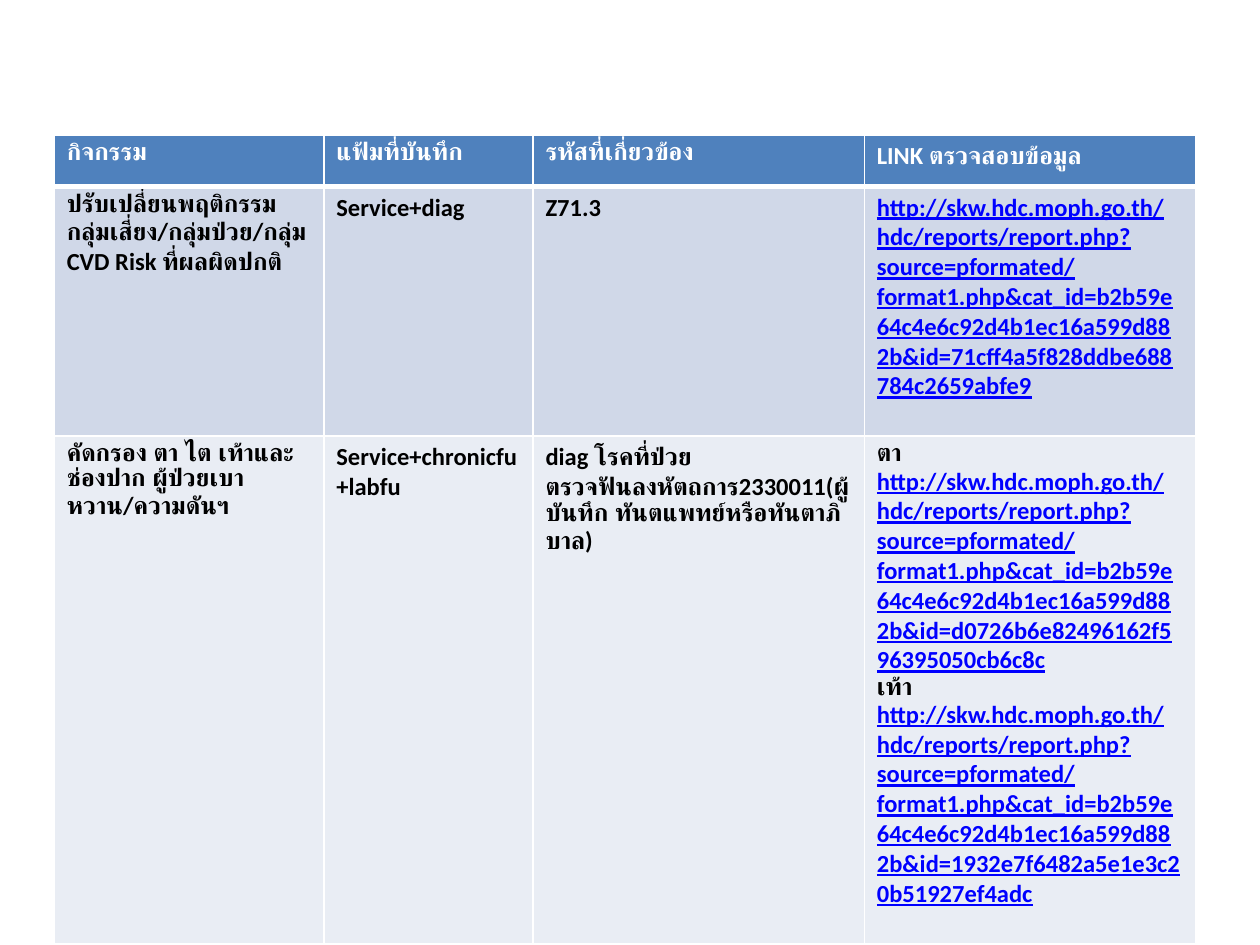
"""Build a slide with a table of screening activities, files, codes and report links."""
import lxml.etree
import pptx
import pptx.dml.color
import pptx.oxml.ns
import pptx.util

COLORS = {
    "header": "4F81BD",
    "odd": "D0D8E8",
    "even": "E9EDF4",
    "white": "FFFFFF",
    "text": "000000",
    "link": "0000FF",
}
COLUMNS = [2.14, 1.66, 2.63, 2.63]
ROWS = [0.41, 1.98, 4.03]
REPORT = (
    "http://skw.hdc.moph.go.th/hdc/reports/report.php?source=pformated/format1.php"
    "&cat_id=b2b59e64c4e6c92d4b1ec16a599d882b&id="
)
CONTENT = [
    [["กิจกรรม"], ["แฟ้มที่บันทึก"], ["รหัสที่เกี่ยวข้อง"], ["LINK ตรวจสอบข้อมูล"]],
    [
        ["ปรับเปลี่ยนพฤติกรรมกลุ่มเสี่ยง/กลุ่มป่วย/กลุ่ม CVD Risk ที่ผลผิดปกติ"],
        ["Service+diag"],
        ["Z71.3"],
        [REPORT + "71cff4a5f828ddbe688784c2659abfe9"],
    ],
    [
        ["คัดกรอง ตา ไต เท้าและช่องปาก ผู้ป่วยเบาหวาน/ความดันฯ"],
        ["Service+chronicfu+labfu"],
        ["diag โรคที่ป่วย", "ตรวจฟันลงหัตถการ2330011(ผู้บันทึก ทันตแพทย์หรือทันตาภิบาล)"],
        [
            "ตา",
            REPORT + "d0726b6e82496162f596395050cb6c8c",
            "เท้า",
            REPORT + "1932e7f6482a5e1e3c20b51927ef4adc",
        ],
    ],
]
ROW_STYLES = [("header", "white"), ("odd", "text"), ("even", "text")]


def color(name):
    return pptx.dml.color.RGBColor.from_string(COLORS[name])


def add_border(cell, side, points):
    qn = pptx.oxml.ns.qn
    properties = cell._tc.get_or_add_tcPr()
    line = lxml.etree.SubElement(properties, qn(f"a:ln{side}"), w=str(pptx.util.Pt(points)))
    fill = lxml.etree.SubElement(line, qn("a:solidFill"))
    lxml.etree.SubElement(fill, qn("a:srgbClr"), val=COLORS["white"])


presentation = pptx.Presentation()
presentation.slide_width = pptx.util.Inches(10)
presentation.slide_height = pptx.util.Inches(7.5)
slide = presentation.slides.add_slide(presentation.slide_layouts[6])

table = slide.shapes.add_table(
    len(ROWS),
    len(COLUMNS),
    pptx.util.Inches(0.43),
    pptx.util.Inches(1.07),
    pptx.util.Inches(sum(COLUMNS)),
    pptx.util.Inches(sum(ROWS)),
).table
for column, width in zip(table.columns, COLUMNS):
    column.width = pptx.util.Inches(width)
for row, height in zip(table.rows, ROWS):
    row.height = pptx.util.Inches(height)

for row_index, (row_content, (fill_name, text_name)) in enumerate(zip(CONTENT, ROW_STYLES)):
    for column_index, lines in enumerate(row_content):
        cell = table.cell(row_index, column_index)
        for side in "LRTB":
            thick = (row_index, side) in [(0, "B"), (1, "T")]
            add_border(cell, side, 3 if thick else 1)
        cell.fill.solid()
        cell.fill.fore_color.rgb = color(fill_name)
        for line_index, text in enumerate(lines):
            frame = cell.text_frame
            paragraph = frame.add_paragraph() if line_index else frame.paragraphs[0]
            run = paragraph.add_run()
            run.text = text
            is_link = text.startswith(REPORT)
            run.font.name = "Calibri"
            run.font.size = pptx.util.Pt(14)
            run.font.bold = True
            run.font.underline = is_link
            run.font.color.rgb = color("link" if is_link else text_name)

presentation.save("out.pptx")
